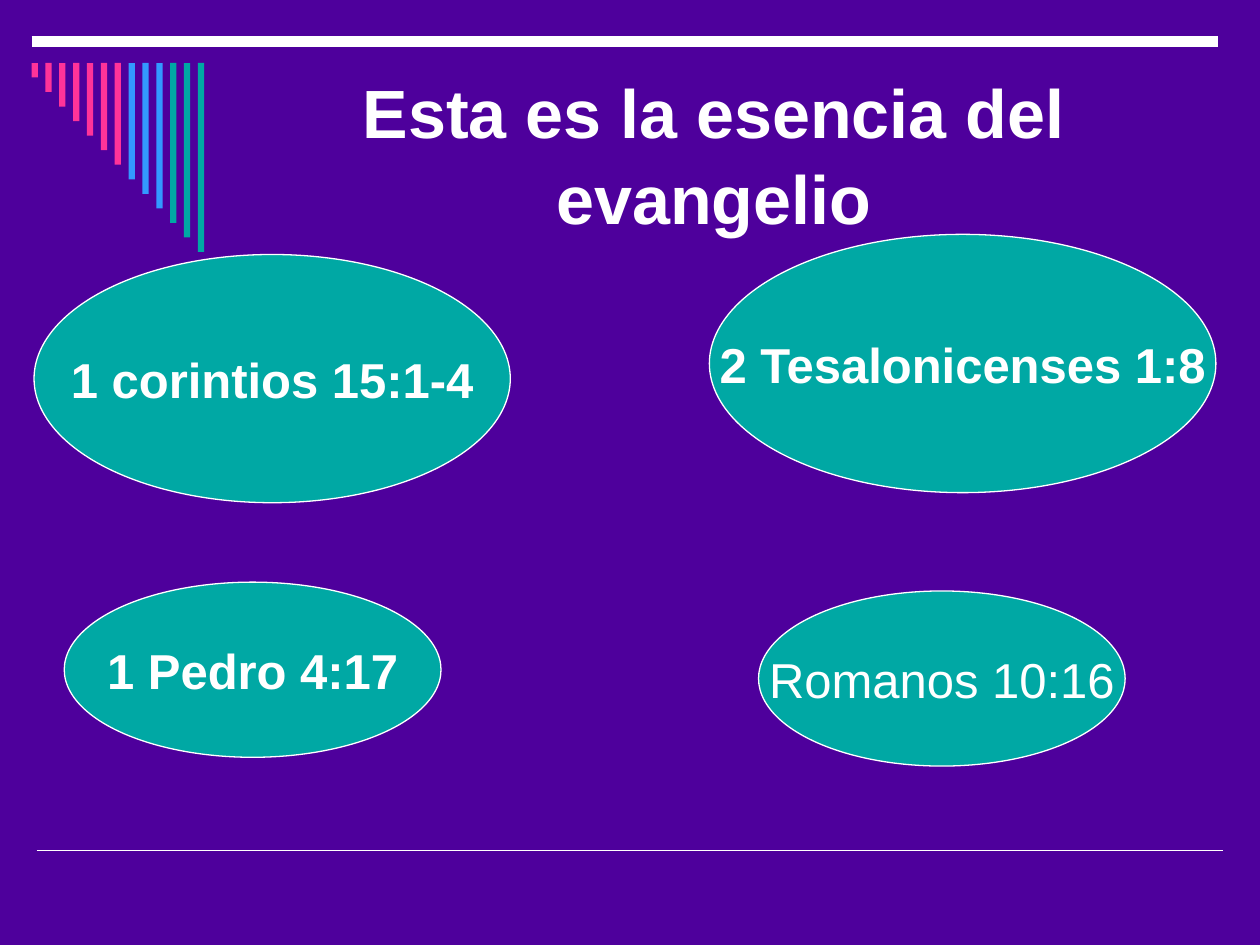
from dataclasses import dataclass

from lxml import etree
from pptx import Presentation
from pptx.dml.color import RGBColor
from pptx.enum.shapes import MSO_CONNECTOR, MSO_SHAPE
from pptx.enum.text import MSO_ANCHOR, MSO_AUTO_SIZE, PP_ALIGN
from pptx.oxml.ns import qn
from pptx.util import Inches, Pt

STRAIGHT = MSO_CONNECTOR.STRAIGHT
BAR, OVAL = MSO_SHAPE.RECTANGLE, MSO_SHAPE.OVAL
MIDDLE, CENTER, NO_FIT = MSO_ANCHOR.MIDDLE, PP_ALIGN.CENTER, MSO_AUTO_SIZE.NONE

COLORS = {
    "purple": "4E009C",
    "white": "FFFFFF",
    "pink": "FF3399",
    "blue": "3399FF",
    "teal": "00A8A4",
}
BAR_COLORS = ["pink"] * 7 + ["blue"] * 3 + ["teal"] * 3
BAR_LEFT, BAR_TOP, BAR_PITCH, BAR_WIDTH = 0.25, 0.5, 0.11, 0.05
LONGEST_BAR = 1.5
RULE_WIDTH = 9.42


@dataclass(frozen=True)
class Box:
    left: float
    top: float
    width: float
    height: float

    def emu(self) -> tuple:
        return tuple(map(Inches, (self.left, self.top, self.width, self.height)))


@dataclass(frozen=True)
class Verse:
    reference: str
    box: Box
    bold: bool = True


@dataclass(frozen=True)
class Rule:
    left: float
    top: float
    weight: float


TITLE_BOX = Box(1.83, 0.5, 7.67, 1.42)
RULES = [Rule(0.29, 6.75, 1), Rule(0.25, 0.33, 6)]
VERSES = [
    Verse("1 corintios 15:1-4", Box(0.27, 2.02, 3.78, 1.97)),
    Verse("2 Tesalonicenses 1:8", Box(5.63, 1.86, 4.02, 2.05)),
    Verse("1 Pedro 4:17", Box(0.51, 4.62, 2.99, 1.39)),
    Verse("Romanos 10:16", Box(6.02, 4.69, 2.91, 1.39), bold=False),
]


def color(name: str) -> RGBColor:
    """Look up a palette colour."""
    return RGBColor.from_string(COLORS[name])


def apply(target, values: dict) -> None:
    """Set each named attribute on the target."""
    for name, value in values.items():
        setattr(target, name, value)


def write(shape, wording: str, size: float, bold: bool, wrap: bool, spacing: float) -> None:
    """Put one centred white paragraph in a shape."""
    frame = shape.text_frame
    frame.text = wording
    apply(frame, {"word_wrap": wrap, "vertical_anchor": MIDDLE, "auto_size": NO_FIT})
    paragraph = frame.paragraphs[0]
    apply(paragraph, {"alignment": CENTER, "line_spacing": spacing})
    font = paragraph.runs[0].font
    apply(font, {"name": "Arial", "size": Pt(size), "bold": bold})
    font.color.rgb = color("white")


def draw_rule(slide, rule: Rule) -> None:
    """Draw a horizontal white rule."""
    left, top, width, _ = Box(rule.left, rule.top, RULE_WIDTH, 0).emu()
    connector = slide.shapes.add_connector(STRAIGHT, left, top, left + width, top)
    connector.line.color.rgb = color("white")
    connector.line.width = Pt(rule.weight)
    etree.SubElement(connector.element.spPr, qn("a:effectLst"))


def draw_filled(shapes, preset, box: Box, fill: str):
    """Draw a flat filled preset shape without an outline."""
    shape = shapes.add_shape(preset, *box.emu())
    shape.shadow.inherit = False
    shape.fill.solid()
    shape.fill.fore_color.rgb = color(fill)
    shape.line.fill.background()
    return shape


def draw_bars(slide) -> None:
    """Draw the group of bars that lengthen in equal steps."""
    bars = slide.shapes.add_group_shape().shapes
    for step, fill in enumerate(BAR_COLORS):
        height = LONGEST_BAR * (step + 1) / len(BAR_COLORS)
        box = Box(BAR_LEFT + step * BAR_PITCH, BAR_TOP, BAR_WIDTH, height)
        draw_filled(bars, BAR, box, fill)


def draw_verse(slide, verse: Verse) -> None:
    """Draw an outlined oval holding a Bible reference."""
    oval = draw_filled(slide.shapes, OVAL, verse.box, "teal")
    oval.line.color.rgb = color("white")
    oval.line.width = Pt(0.75)
    write(oval, verse.reference, 28, verse.bold, wrap=False, spacing=1.0)


def main() -> None:
    """Build and save the slide."""
    deck = Presentation()
    apply(deck, {"slide_width": Inches(10), "slide_height": Inches(7.5)})
    slide = deck.slides.add_slide(deck.slide_layouts[5])
    slide.background.fill.solid()
    slide.background.fill.fore_color.rgb = color("purple")

    for rule in RULES:
        draw_rule(slide, rule)
    draw_bars(slide)

    title = slide.shapes.title
    apply(title, dict(zip(("left", "top", "width", "height"), TITLE_BOX.emu())))
    write(title, "Esta es la esencia del evangelio", 39, True, wrap=True, spacing=1.05)

    for verse in VERSES:
        draw_verse(slide, verse)
    deck.save("out.pptx")


if __name__ == "__main__":
    main()
